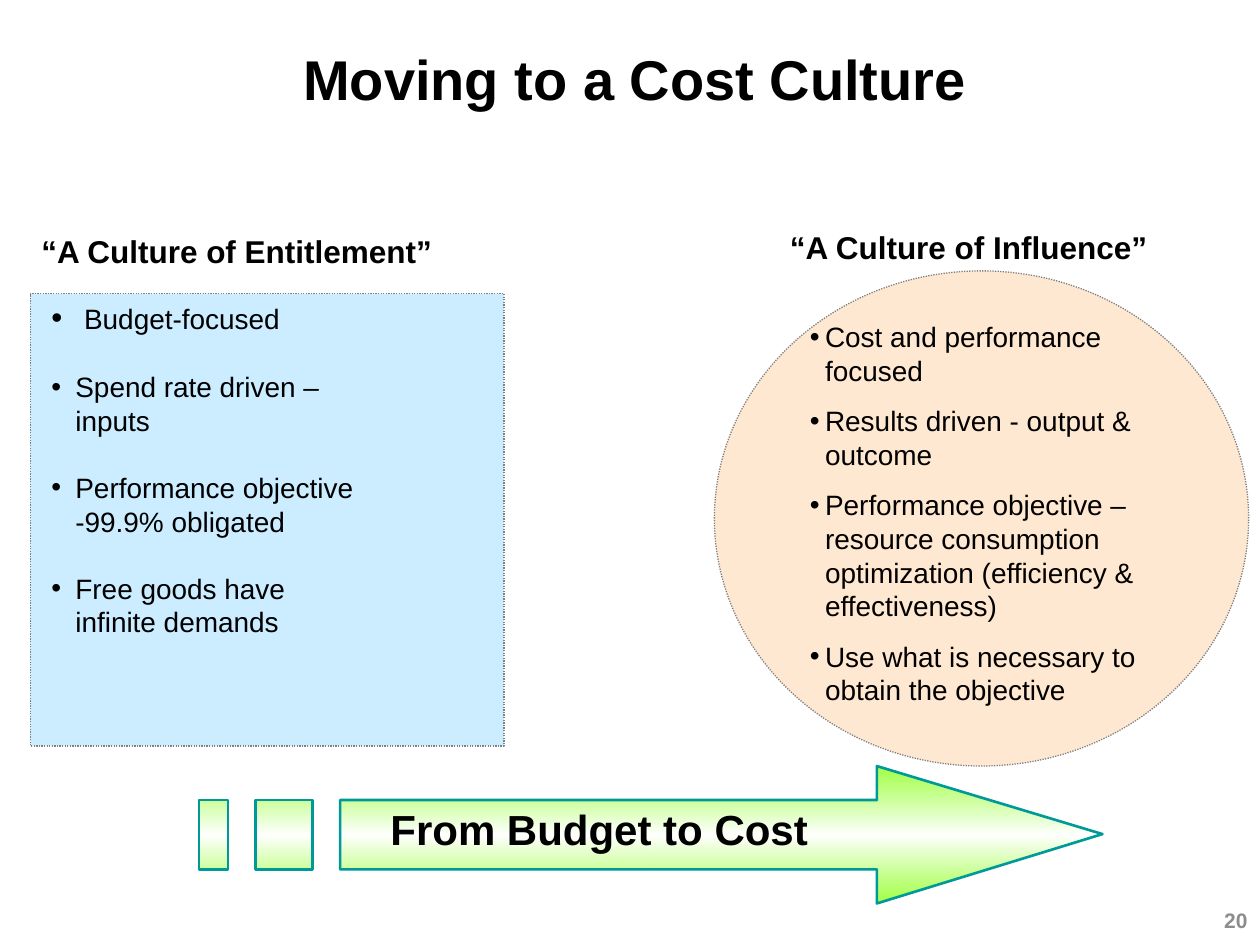
from lxml import etree
from pptx import Presentation
from pptx import util as u
from pptx.dml.color import RGBColor
from pptx.enum import dml, shapes, text
from pptx.oxml import ns, parse_xml

COLORS = {
    "ink": "000000", "number": "8C8C8C", "border": "808080", "entitlement": "CCECFF",
    "influence": "FFE8D1", "arrow_line": "009999", "arrow_edge": "99FF33", "arrow_middle": "FFFFFF",
}
FONT = "Arial"
TITLE = "Moving to a Cost Culture"
PANELS = [
    (shapes.MSO_SHAPE.RECTANGLE, "entitlement", (0.24, 2.33, 3.76, 3.59)),
    (shapes.MSO_SHAPE.OVAL, "influence", (5.67, 2.15, 4.24, 3.93)),
]
HEADINGS = [
    ("“A Culture of Entitlement”", (0.23, 1.79, 3.31, 0.4)),
    ("“A Culture of Influence”", (6.17, 1.76, 3.05, 0.4)),
]
LISTS = [
    {"box": (0.31, 2.32, 2.75, 3.34), "indent": 0.19, "gap": 19.2, "items": [
        [(" ", 18), ("Budget-focused", 16)],
        "Spend rate driven –inputs",
        "Performance objective -99.9% obligated",
        "Free goods have infinite demands",
    ]},
    {"box": (6.33, 2.49, 3.05, 3.18), "indent": 0.12, "gap": 9.6, "items": [
        "Cost and performance focused",
        "Results driven - output & outcome",
        "Performance objective – resource consumption optimization (efficiency & effectiveness)",
        "Use what is necessary to obtain the objective",
    ]},
]
ARROW_LABEL = ("From Budget to Cost", (3, 6.33, 3.81, 0.72))
PAGE_NUMBER = ("20", (9.5, 7.1, 0.5, 0.4))
SHAFT_TOP, SHAFT_BOTTOM = 6.35, 6.9
ARROW = [(6.96, 6.08), (6.96, SHAFT_TOP), (2.7, SHAFT_TOP), (2.7, SHAFT_BOTTOM),
         (6.96, SHAFT_BOTTOM), (6.96, 7.17), (8.75, 6.62)]
TAIL_BARS = [(2.03, 2.48), (1.58, 1.81)]
GRADIENT = [(0, "arrow_edge", 90), (50, "arrow_middle", 100), (100, "arrow_edge", 90)]


def color(name):
    return RGBColor.from_string(COLORS[name])


def inches(values):
    return [u.Inches(value) for value in values]


def write(shape, paragraphs, size=16, bold=False, ink="ink", align=text.PP_ALIGN.LEFT,
          anchor=text.MSO_ANCHOR.TOP, wrap=True, indent=None, gap=0):
    frame = shape.text_frame
    frame.word_wrap = wrap
    frame.auto_size = text.MSO_AUTO_SIZE.NONE
    frame.vertical_anchor = anchor
    for index, content in enumerate(paragraphs):
        paragraph = frame.add_paragraph() if index else frame.paragraphs[0]
        paragraph.alignment = align
        runs = [(content, size)] if isinstance(content, str) else content
        if indent:
            paragraph.line_spacing = u.Pt(1.2 * max(points for _, points in runs))
            if index:
                paragraph.space_before = u.Pt(gap)
            properties = paragraph._p.get_or_add_pPr()
            properties.set("marL", str(u.Inches(indent)))
            properties.set("indent", str(-u.Inches(indent)))
            etree.SubElement(properties, ns.qn("a:buFont"), typeface=FONT)
            etree.SubElement(properties, ns.qn("a:buChar"), char="•")
        for words, points in runs:
            run = paragraph.add_run()
            run.text = words
            run.font.name = FONT
            run.font.size = u.Pt(points)
            run.font.bold = bold
            run.font.color.rgb = color(ink)


def add_text(slide, box, paragraphs, **style):
    write(slide.shapes.add_textbox(*inches(box)), paragraphs, **style)


def add_panel(slide, kind, fill, box):
    shape = slide.shapes.add_shape(kind, *inches(box))
    shape.shadow.inherit = False
    shape.fill.solid()
    shape.fill.fore_color.rgb = color(fill)
    shape.line.color.rgb = color("border")
    shape.line.width = u.Pt(0.75)
    shape.line.dash_style = dml.MSO_LINE.ROUND_DOT


def add_arrow(slide):
    bars = [[(left, SHAFT_TOP), (left, SHAFT_BOTTOM), (right, SHAFT_BOTTOM), (right, SHAFT_TOP)]
            for left, right in TAIL_BARS]
    builder = slide.shapes.build_freeform(*inches(ARROW[0]))
    for outline in [ARROW, *bars]:
        start, *corners = [inches(point) for point in outline]
        if outline is not ARROW:
            builder.move_to(*start)
        builder.add_line_segments(corners, close=True)
    shape = builder.convert_to_shape()
    shape.shadow.inherit = False
    shape.line.color.rgb = color("arrow_line")
    shape.line.width = u.Pt(1.5)
    stops = "".join(
        f'<a:gs pos="{position * 1000}"><a:srgbClr val="{COLORS[name]}">'
        f'<a:alpha val="{opacity * 1000}"/></a:srgbClr></a:gs>'
        for position, name, opacity in GRADIENT)
    gradient = parse_xml(f'<a:gradFill {ns.nsdecls("a")} rotWithShape="1"><a:gsLst>{stops}</a:gsLst>'
                         '<a:lin ang="5400000" scaled="0"/></a:gradFill>')
    shape._element.spPr.find(ns.qn("a:custGeom")).addnext(gradient)


def main():
    presentation = Presentation()
    presentation.slide_width, presentation.slide_height = u.Inches(10), u.Inches(7.5)
    slide = presentation.slides.add_slide(presentation.slide_layouts[5])
    title = slide.shapes.title
    title.left, title.top, title.width, title.height = inches((1.25, 0.3, 7.58, 1.03))
    write(title, [TITLE], size=32, bold=True, align=text.PP_ALIGN.CENTER)
    for panel in PANELS:
        add_panel(slide, *panel)
    add_arrow(slide)
    label, box = ARROW_LABEL
    add_text(slide, box, [label], size=24, bold=True)
    for group in LISTS:
        add_text(slide, group["box"], group["items"], indent=group["indent"], gap=group["gap"])
    for heading, box in HEADINGS:
        add_text(slide, box, [heading], size=18, bold=True, wrap=False)
    number, box = PAGE_NUMBER
    add_text(slide, box, [number], size=12, bold=True, ink="number",
             align=text.PP_ALIGN.RIGHT, anchor=text.MSO_ANCHOR.MIDDLE)
    presentation.save("out.pptx")


if __name__ == "__main__":
    main()
